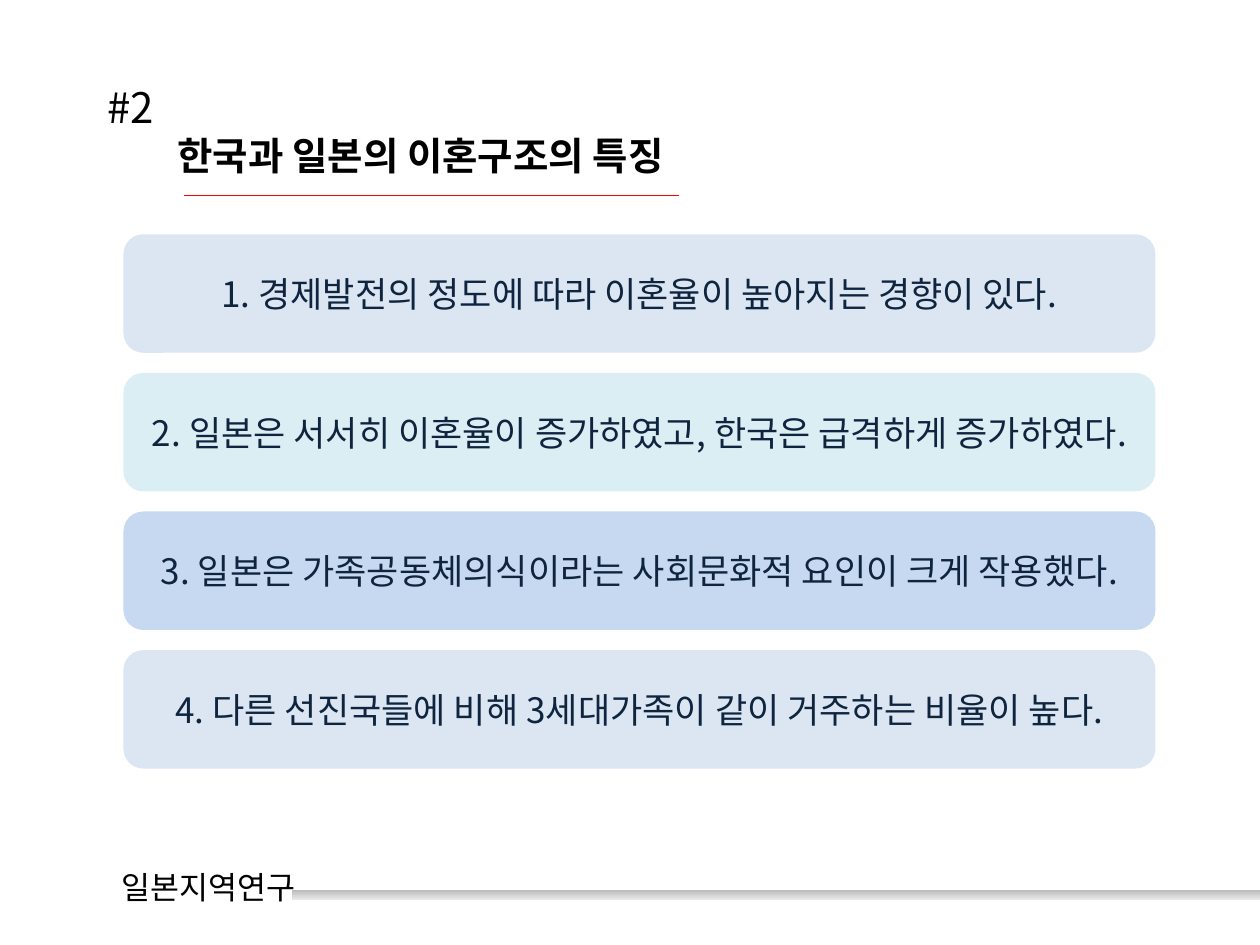
from lxml.etree import SubElement
from pptx import Presentation
from pptx.dml.color import RGBColor
from pptx.enum.shapes import MSO_CONNECTOR as Connector, MSO_SHAPE as Shape
from pptx.enum.text import MSO_ANCHOR as Anchor, MSO_AUTO_SIZE as AutoSize, PP_ALIGN as Align
from pptx.oxml.ns import qn
from pptx.util import Inches, Pt

# Content
NUMBER = "#2"
HEADING = "한국과 일본의 이혼구조의 특징"
FOOTER = "일본지역연구"
POINTS = [
    ("1. 경제발전의 정도에 따라 이혼율이 높아지는 경향이 있다.", "mist"),
    ("2. 일본은 서서히 이혼율이 증가하였고, 한국은 급격하게 증가하였다.", "aqua"),
    ("3. 일본은 가족공동체의식이라는 사회문화적 요인이 크게 작용했다.", "sky"),
    ("4. 다른 선진국들에 비해 3세대가족이 같이 거주하는 비율이 높다.", "mist"),
]

# Style
FONT = "Noto Sans CJK KR"
COLORS = {
    "black": "000000", "navy": "0F243E", "red": "FF0000",
    "mist": "DCE6F2", "aqua": "DBEEF4", "sky": "C6D9F1",
    "bar_dark": "B8B8B8", "bar_light": "E9E9E9",
}

# Grid, in inches
WIDTH, HEIGHT = 10, 7.5
MARGIN = 0.75
CARD_LEFT, CARD_TOP, CARD_WIDTH, CARD_HEIGHT = 0.98, 1.86, 8.19, 0.94
CARD_PITCH = 1.1
BAR_LEFT = 2.32


def color(name):
    return RGBColor.from_string(COLORS[name])


def write(paragraph, text, size, fill="black", bold=False, align=Align.LEFT):
    paragraph.alignment = align
    run = paragraph.add_run()
    run.text = text
    font = run.font
    font.size, font.bold, font.name = Pt(size), bold, FONT
    font.color.rgb = color(fill)
    SubElement(font._element, qn("a:ea")).set("typeface", FONT)


def add_plain_shape(slide, kind, left, top, width, height):
    shape = slide.shapes.add_shape(
        kind, Inches(left), Inches(top), Inches(width), Inches(height))
    shape.shadow.inherit = False
    shape.line.fill.background()
    return shape


presentation = Presentation()
presentation.slide_width, presentation.slide_height = Inches(WIDTH), Inches(HEIGHT)
slide = presentation.slides.add_slide(presentation.slide_layouts[5])

# Footer bar, fading downwards, and its label
bar = add_plain_shape(slide, Shape.RECTANGLE, BAR_LEFT, 7.06, WIDTH - BAR_LEFT, 0.08)
bar.fill.gradient()
bar.fill.gradient_angle = 270
for stop, name in zip(bar.fill.gradient_stops, ("bar_dark", "bar_light")):
    stop.color.rgb = color(name)

label = add_plain_shape(slide, Shape.ROUNDED_RECTANGLE, MARGIN, 6.82, 1.81, 0.45)
label.fill.background()
label.text_frame.vertical_anchor = Anchor.TOP
write(label.text_frame.paragraphs[0], FOOTER, 18, align=Align.CENTER)

# Title: number above an indented heading
title = slide.shapes.title
title.left, title.top = Inches(MARGIN), Inches(0.6)
title.width, title.height = Inches(6.3), Inches(0.91)
frame = title.text_frame
frame.auto_size = AutoSize.NONE
frame.vertical_anchor = Anchor.TOP
write(frame.paragraphs[0], NUMBER, 24)
heading = frame.add_paragraph()
heading._p.get_or_add_pPr().set("marL", str(Inches(0.56)))
write(heading, HEADING, 22, bold=True)

# Heading underline
underline = slide.shapes.add_connector(
    Connector.STRAIGHT, Inches(1.46), Inches(1.55), Inches(5.39), Inches(1.55))
underline.line.color.rgb = color("red")
underline.line.width = Pt(0.75)
SubElement(underline._element.spPr, qn("a:effectLst"))

# Cards, one per point
for row, (text, fill) in enumerate(POINTS):
    card = add_plain_shape(slide, Shape.ROUNDED_RECTANGLE, CARD_LEFT,
                           CARD_TOP + row * CARD_PITCH, CARD_WIDTH, CARD_HEIGHT)
    card.fill.solid()
    card.fill.fore_color.rgb = color(fill)
    card.text_frame.vertical_anchor = Anchor.MIDDLE
    write(card.text_frame.paragraphs[0], text, 20, "navy", align=Align.CENTER)

presentation.save("out.pptx")
